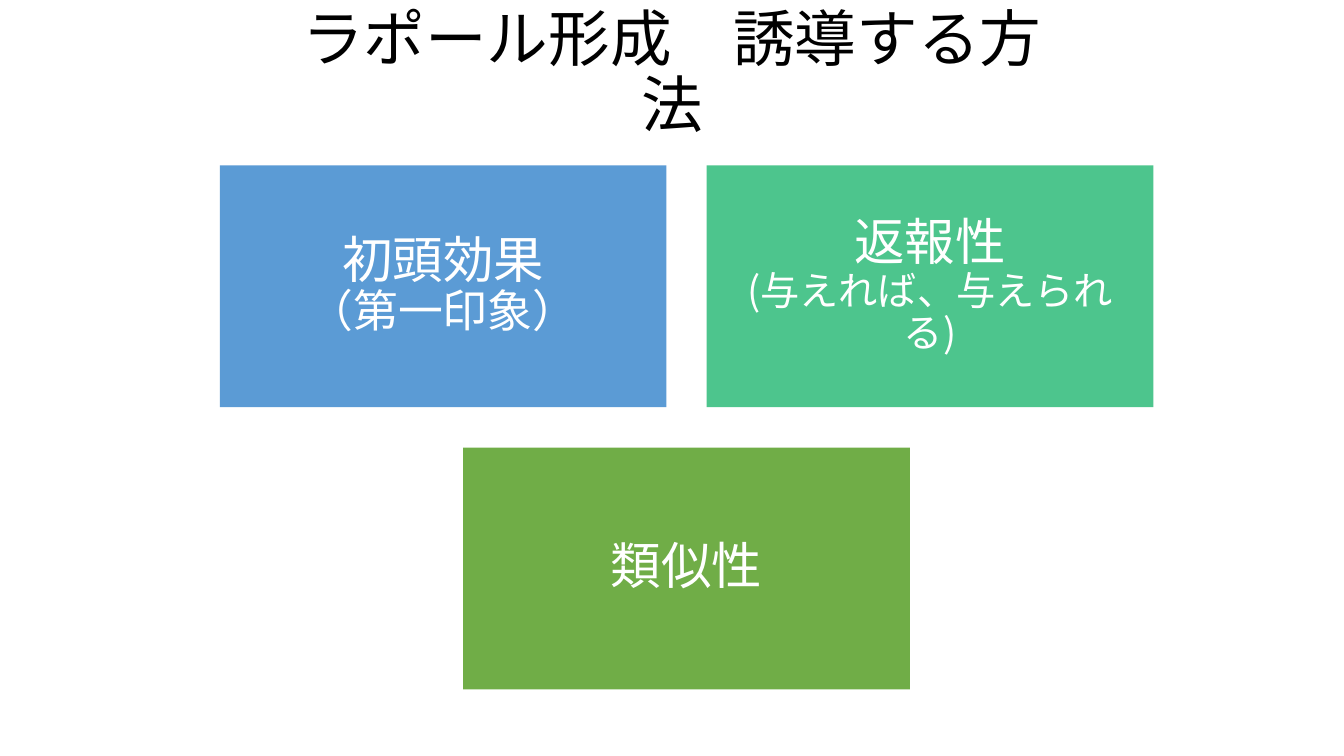
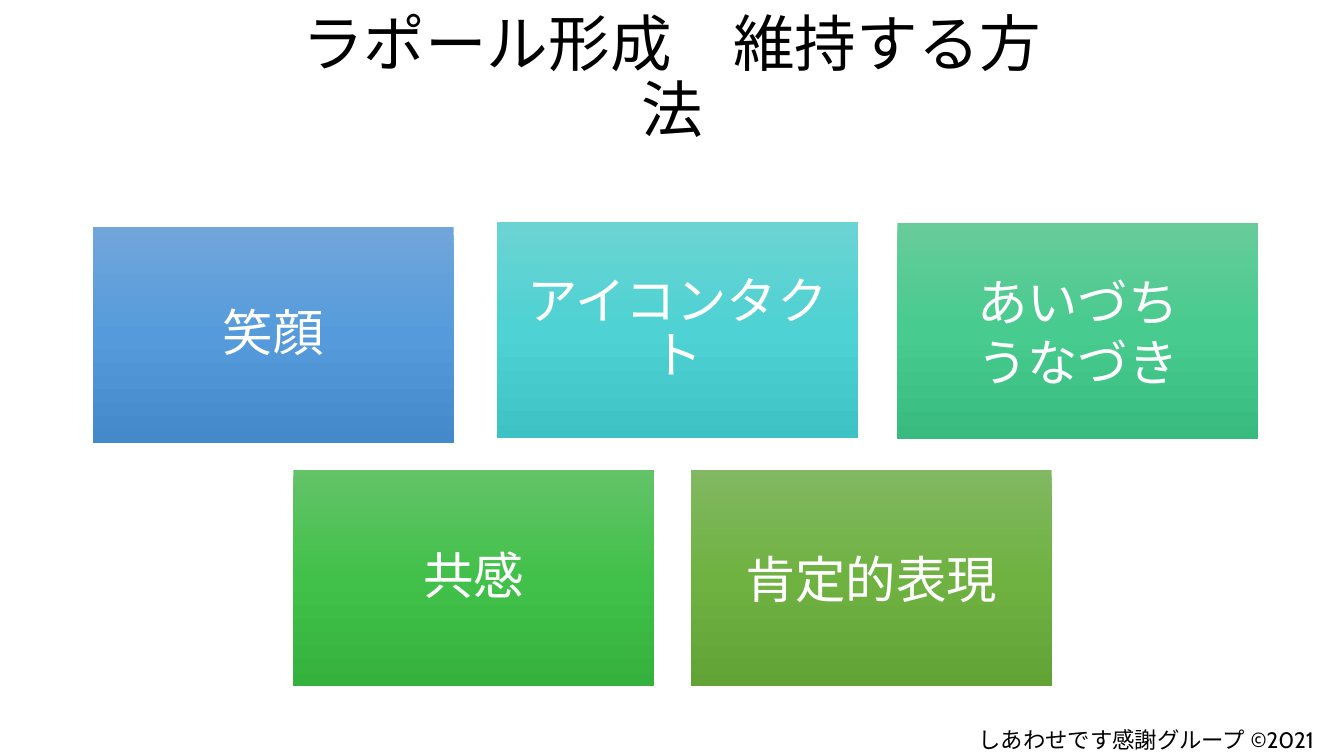
from copy import deepcopy

from lxml.etree import SubElement
from pptx import Presentation
from pptx.dml.color import RGBColor
from pptx.enum.lang import MSO_LANGUAGE_ID as Language
from pptx.enum.shapes import MSO_SHAPE as Shape
from pptx.enum.text import MSO_ANCHOR as Anchor, PP_ALIGN as Align
from pptx.oxml.ns import qn
from pptx.util import Inches, Pt

BLACK = RGBColor(0x00, 0x00, 0x00)
WHITE = RGBColor(0xFF, 0xFF, 0xFF)
BLUE = RGBColor(0x5B, 0x9B, 0xD5)
MINT = RGBColor(0x4D, 0xC5, 0x8D)
GREEN = RGBColor(0x70, 0xAD, 0x47)
BLUE_FADE = RGBColor(0x71, 0xA6, 0xDB), RGBColor(0x55, 0x9B, 0xDB), RGBColor(0x44, 0x8A, 0xCA)
TEAL_FADE = RGBColor(0x6C, 0xD3, 0xD3), RGBColor(0x4E, 0xD2, 0xD3), RGBColor(0x3E, 0xC2, 0xC3)
MINT_FADE = RGBColor(0x67, 0xCC, 0x9A), RGBColor(0x47, 0xCB, 0x8E), RGBColor(0x39, 0xBB, 0x7F)
LEAF_FADE = RGBColor(0x63, 0xC3, 0x68), RGBColor(0x42, 0xC1, 0x4A), RGBColor(0x34, 0xB2, 0x3D)
GREEN_FADE = RGBColor(0x81, 0xB8, 0x61), RGBColor(0x6F, 0xB2, 0x42), RGBColor(0x62, 0xA3, 0x36)

JAPANESE_FONT = "Noto Sans CJK JP"
TITLE_HEIGHT = 0.72
CARD_SIZE = 36
CARD_FRAME = {
    "word_wrap": True,
    "vertical_anchor": Anchor.MIDDLE,
    "margin_left": Inches(0.15),
    "margin_right": Inches(0.15),
    "margin_top": Inches(0.15),
    "margin_bottom": Inches(0.15),
}
TEXT_FRAME = {"word_wrap": True, "vertical_anchor": Anchor.MIDDLE}
FOOTER_FRAME = {"word_wrap": True, "vertical_anchor": Anchor.TOP}
CENTERED = {"alignment": Align.CENTER, "line_spacing": 0.9}
CENTERED_LOOSE = {"alignment": Align.CENTER, "line_spacing": 1.0}
RIGHT = {"alignment": Align.RIGHT}


def apply(target, values):
    for name, value in values.items():
        setattr(target, name, value)


def write(shape, lines, frame_format, paragraph_format, color, latin=JAPANESE_FONT):
    """Fill the shape with one paragraph of (text, size) lines."""
    frame = shape.text_frame
    apply(frame, frame_format)
    paragraph = frame.paragraphs[0]
    apply(paragraph, paragraph_format)
    for index, (text, size) in enumerate(lines):
        if index:
            paragraph.add_line_break()
        run = paragraph.add_run()
        run.text = text
        apply(run.font, {"size": Pt(size), "name": latin,
                         "language_id": Language.JAPANESE})
        run.font.color.rgb = color
        east_asian = SubElement(run.font._element, qn("a:ea"))
        east_asian.set("typeface", JAPANESE_FONT)


def add_text(slide, area, text, size, *style):
    box = slide.shapes.add_textbox(*map(Inches, area))
    write(box, [(text, size)], *style)


def add_title(slide, left, top, width, text):
    add_text(slide, (left, top, width, TITLE_HEIGHT), text, 44, TEXT_FRAME, CENTERED, BLACK)


def fade(card, colors):
    """Fill the card from top to bottom with evenly spaced colours."""
    card.fill.gradient()
    card.fill.gradient_angle = 270
    stop_list = card._element.spPr.find(".//" + qn("a:gsLst"))
    stop_list.insert(1, deepcopy(stop_list[0]))
    for index, (stop, color) in enumerate(zip(card.fill.gradient_stops, colors)):
        stop.position = index / (len(colors) - 1)
        stop.color.rgb = color


def add_card(slide, area, fill, lines, paragraph_format=CENTERED):
    """Add a rectangle; fill is one colour or a tuple of fade colours."""
    card = slide.shapes.add_shape(Shape.RECTANGLE, *map(Inches, area))
    card.shadow.inherit = False
    card.line.fill.background()
    if isinstance(fill, RGBColor):
        card.fill.solid()
        card.fill.fore_color.rgb = fill
    else:
        fade(card, fill)
    write(card, lines, CARD_FRAME, paragraph_format, WHITE)


def build_guiding(slide):
    add_title(slide, 2.69, 0.38, 7.95, "ラポール形成　誘導する方法")
    center, first_top = 6.81, 1.64
    width, height, gap = 4.43, 2.4, 0.4
    rows = [
        [(BLUE, [("初頭効果", CARD_SIZE), ("（第一印象）", 32)]),
         (MINT, [("返報性", CARD_SIZE), ("(与えれば、与えられる)", 28)])],
        [(GREEN, [("類似性", CARD_SIZE)])],
    ]
    for row_number, row in enumerate(rows):
        top = first_top + row_number * (height + gap)
        left = center - (len(row) * (width + gap) - gap) / 2
        for column, (fill, lines) in enumerate(row):
            add_card(slide, (left + column * (width + gap), top, width, height), fill, lines)


def build_keeping(slide):
    width, height = 3.58, 2.15
    cards = [
        (0.92, 2.25, BLUE_FADE, ["笑顔"], CENTERED),
        (4.93, 2.2, TEAL_FADE, ["アイコンタクト"], CENTERED),
        (8.9, 2.21, MINT_FADE, ["あいづち", "うなづき"], CENTERED_LOOSE),
        (2.91, 4.66, LEAF_FADE, ["共感"], CENTERED),
        (6.85, 4.66, GREEN_FADE, ["肯定的表現"], CENTERED_LOOSE),
    ]
    for left, top, colors, words, spacing in cards:
        lines = [(word, CARD_SIZE) for word in words]
        add_card(slide, (left, top, width, height), colors, lines, spacing)
    add_text(slide, (8.9, 7.15, 4.23, 0.37), "しあわせです感謝グループ ©2021", 16,
             FOOTER_FRAME, RIGHT, BLACK, "Cabin")
    add_title(slide, 2.74, 0.43, 7.85, "ラポール形成　維持する方法")


def main():
    deck = Presentation()
    deck.slide_width, deck.slide_height = Inches(13.33), Inches(7.5)
    blank = deck.slide_layouts[6]
    for build in (build_guiding, build_keeping):
        build(deck.slides.add_slide(blank))
    deck.save("out.pptx")


if __name__ == "__main__":
    main()
